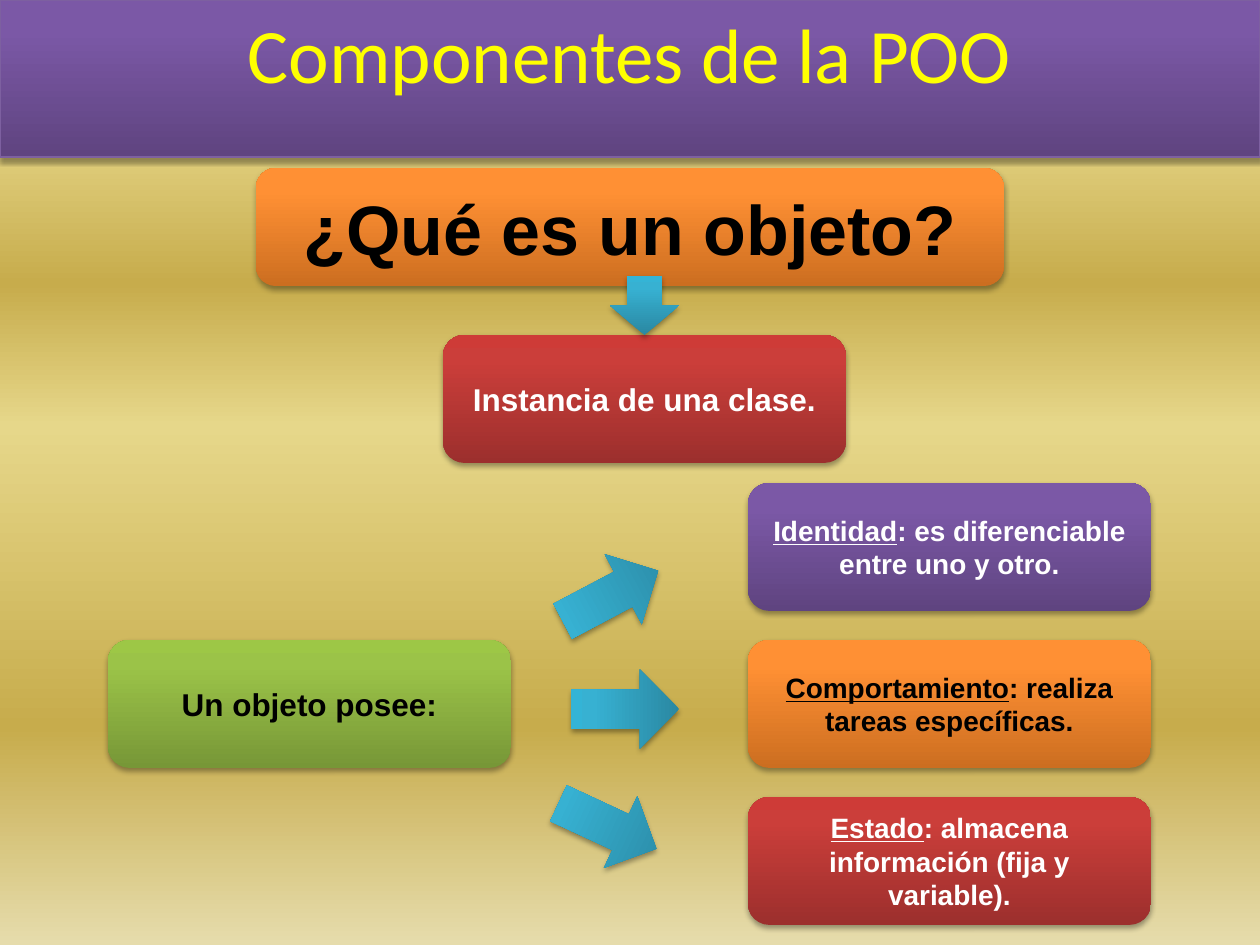
from lxml.etree import SubElement
from pptx import Presentation
from pptx.dml.color import RGBColor
from pptx.enum.shapes import MSO_SHAPE
from pptx.enum.text import MSO_ANCHOR, PP_ALIGN
from pptx.oxml.ns import qn
from pptx.util import Pt

PX = 914400 // 126
INK = {"black": "000000", "white": "FFFFFF", "yellow": "FFFF00", "edge": "7D60A0"}
# Colours of each gradient, in the order of its stops
FADE = {
    "gold": ["E6DCAC", "E6D78A", "C7AC4C", "E6D78A", "C7AC4C", "E6DCAC"],
    "orange": ["CC6E20", "FF9034", "FF9136"],
    "red": ["9C2F2D", "CB3E3A", "CE3B37"],
    "green": ["779737", "9BC348", "9DC746"],
    "violet": ["5F4480", "7B58A6", "7C57A8"],
    "teal": ["2A88A2", "37B1D2", "34B4D6"],
}
STOPS = {3: [0, 80, 100], 6: [0, 12, 30, 45, 77, 100]}


def paint(fill, root, name, angle):
    """Give a fill the named gradient; root is the element that holds it."""
    fill.gradient()
    fill.gradient_angle = angle
    stops = root.find(".//" + qn("a:gsLst"))
    for old in list(stops):
        stops.remove(old)
    tones = FADE[name]
    for spot, tone in zip(STOPS[len(tones)], tones):
        stop = SubElement(stops, qn("a:gs"), pos=str(spot * 1000))
        SubElement(stop, qn("a:srgbClr"), val=tone)


def shade(shape):
    shape.shadow.inherit = False
    effects = shape._element.spPr.find(qn("a:effectLst"))
    drop = SubElement(effects, qn("a:outerShdw"), blurRad=str(Pt(3.1)),
                      dist=str(Pt(1.8)), dir="5400000", rotWithShape="0")
    tone = SubElement(drop, qn("a:srgbClr"), val=INK["black"])
    SubElement(tone, qn("a:alpha"), val="35000")


def block(slide, kind, box, fade, turn=0):
    shape = slide.shapes.add_shape(kind, *[n * PX for n in box])
    shape.rotation = turn
    paint(shape.fill, shape._element.spPr, fade, 90)
    shape.line.fill.background()
    shade(shape)
    return shape


def write(shape, text, lead="", size=18, ink="black", font="Arial",
          bold=True, anchor=MSO_ANCHOR.MIDDLE):
    """Centre the text in a shape, after an underlined lead word."""
    frame = shape.text_frame
    frame.word_wrap = True
    frame.vertical_anchor = anchor
    line = frame.paragraphs[0]
    line.alignment = PP_ALIGN.CENTER
    for part, under in ((lead, True), (text, False)):
        if part:
            run = line.add_run()
            run.text = part
            run.font.name = font
            run.font.size = Pt(size)
            run.font.bold = bold
            run.font.underline = under
            run.font.color.rgb = RGBColor.from_string(INK[ink])


def card(slide, box, fade, text, **style):
    write(block(slide, MSO_SHAPE.ROUNDED_RECTANGLE, box, fade), text, **style)


def arrow(slide, box, turn=0):
    block(slide, MSO_SHAPE.DOWN_ARROW, box, "teal", turn)


def banner(slide, box):
    bar = block(slide, MSO_SHAPE.RECTANGLE, box, "violet")
    bar.line.color.rgb = RGBColor.from_string(INK["edge"])
    bar.line.width = Pt(0.75)
    write(bar, "Componentes de la POO", size=44, ink="yellow",
          font="Calibri", bold=False, anchor=MSO_ANCHOR.TOP)


def question(slide, box):
    x, y, wide, high = box
    card(slide, (x, y, wide, 118), "orange", "¿Qué es un objeto?", size=40)
    card(slide, (x + 187, y + high - 128, 403, 128), "red",
         "Instancia de una clase.", ink="white")
    arrow(slide, (x + 354, y + 108, 69, 59))


def traits(slide, box):
    x, y, wide, high = box
    w, h = 403, 128
    step = (high - h) // 2
    card(slide, (x, y + step, w, h), "green", "Un objeto posee:")

    # One card for each trait, in the right column
    rows = [
        ("violet", "white", "Identidad", ": es diferenciable entre uno y otro."),
        ("orange", "black", "Comportamiento", ": realiza tareas específicas."),
        ("red", "white", "Estado", ": almacena información (fija y variable)."),
    ]
    for i, (fade, ink, lead, text) in enumerate(rows):
        card(slide, (x + wide - w, y + i * step, w, h), fade, text,
             lead=lead, size=16, ink=ink)

    # Arrows fan out towards the cards
    for dx, dy, turn in ((463, 59, 242.1), (478, 172, 270), (460, 289, 294.9)):
        arrow(slide, (x + dx, y + dy, 79, 108), turn)


def main():
    deck = Presentation()
    deck.slide_width, deck.slide_height = 1260 * PX, 945 * PX
    slide = deck.slides.add_slide(deck.slide_layouts[6])
    paint(slide.background.fill, slide._element, "gold", 270)
    question(slide, (256, 168, 748, 295))
    traits(slide, (108, 483, 1043, 442))
    banner(slide, (0, 0, 1260, 157))
    deck.save("out.pptx")


if __name__ == "__main__":
    main()
